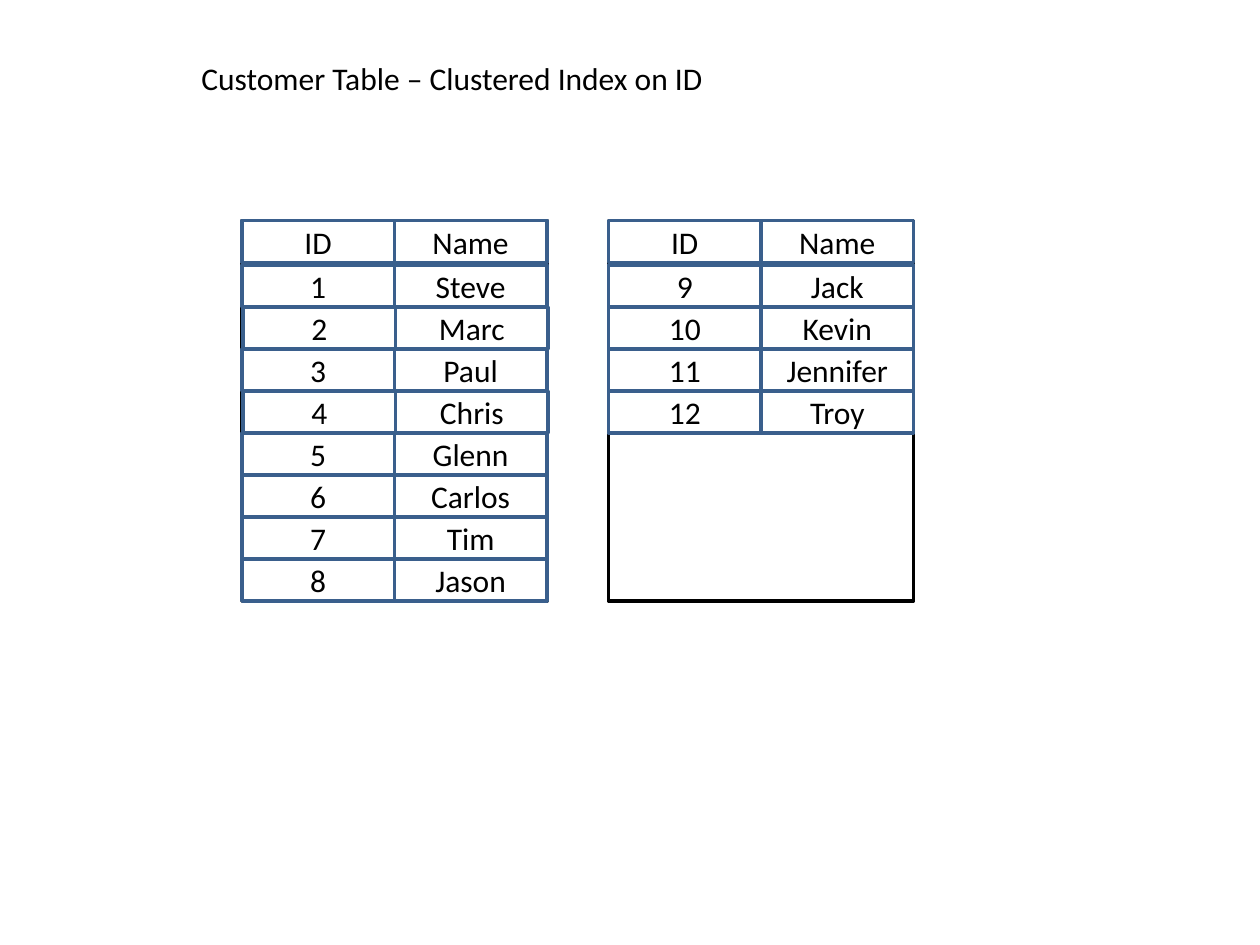
from pptx import Presentation
from pptx.dml.color import RGBColor
from pptx.enum.shapes import MSO_SHAPE as Shape
from pptx.enum.text import MSO_ANCHOR as Anchor, MSO_AUTO_SIZE as Fit, PP_ALIGN as Align
from pptx.util import Inches, Pt

# Grid in inches: rows are a third high and end at the foot of the page
TOP, FOOT = 1.75, 4.77
COL, ROW = 1.21, 1 / 3
SLOTS = 9
NUDGE = 0.01

pages = [
    (1.92, 1, ["Steve", "Marc", "Paul", "Chris", "Glenn", "Carlos", "Tim", "Jason"]),
    (4.83, 9, ["Jack", "Kevin", "Jennifer", "Troy"]),
]
nudged = {2, 4}  # IDs whose rows sit slightly to the right

deck = Presentation()
deck.slide_width, deck.slide_height = Inches(10), Inches(7.5)
slide = deck.slides.add_slide(deck.slide_layouts[6])


def style(frame, text):
    frame.word_wrap = True
    frame.text = text
    font = frame.paragraphs[0].runs[0].font
    font.name, font.size = "Calibri", Pt(18)
    font.color.rgb = RGBColor.from_string("000000")


def box(left, top, width, height, edge):
    rect = slide.shapes.add_shape(
        Shape.RECTANGLE, Inches(left), Inches(top), Inches(width), Inches(height))
    rect.shadow.inherit = False
    rect.fill.solid()
    rect.fill.fore_color.rgb = RGBColor.from_string("FFFFFF")
    rect.line.color.rgb = RGBColor.from_string(edge)
    rect.line.width = Pt(2)
    return rect


# Title
title = slide.shapes.add_textbox(Inches(1.5), Inches(0.42), Inches(7.58), Inches(0.4))
style(title.text_frame, "Customer Table – Clustered Index on ID")
title.text_frame.auto_size = Fit.SHAPE_TO_FIT_TEXT

# Data pages: black frame, header row, then the records
for left, first, names in pages:
    box(left, TOP, 2 * COL, FOOT - TOP, "000000")
    records = [("ID", "Name")] + list(enumerate(names, first))
    for slot, record in enumerate(records):
        top = FOOT - (SLOTS - slot) * ROW if slot else TOP
        start = left + NUDGE if record[0] in nudged else left
        for col, value in enumerate(record):
            cell = box(start + col * COL, top, COL, ROW, "3A5F8C")
            style(cell.text_frame, str(value))
            cell.text_frame.vertical_anchor = Anchor.MIDDLE
            cell.text_frame.paragraphs[0].alignment = Align.CENTER

deck.save("out.pptx")
